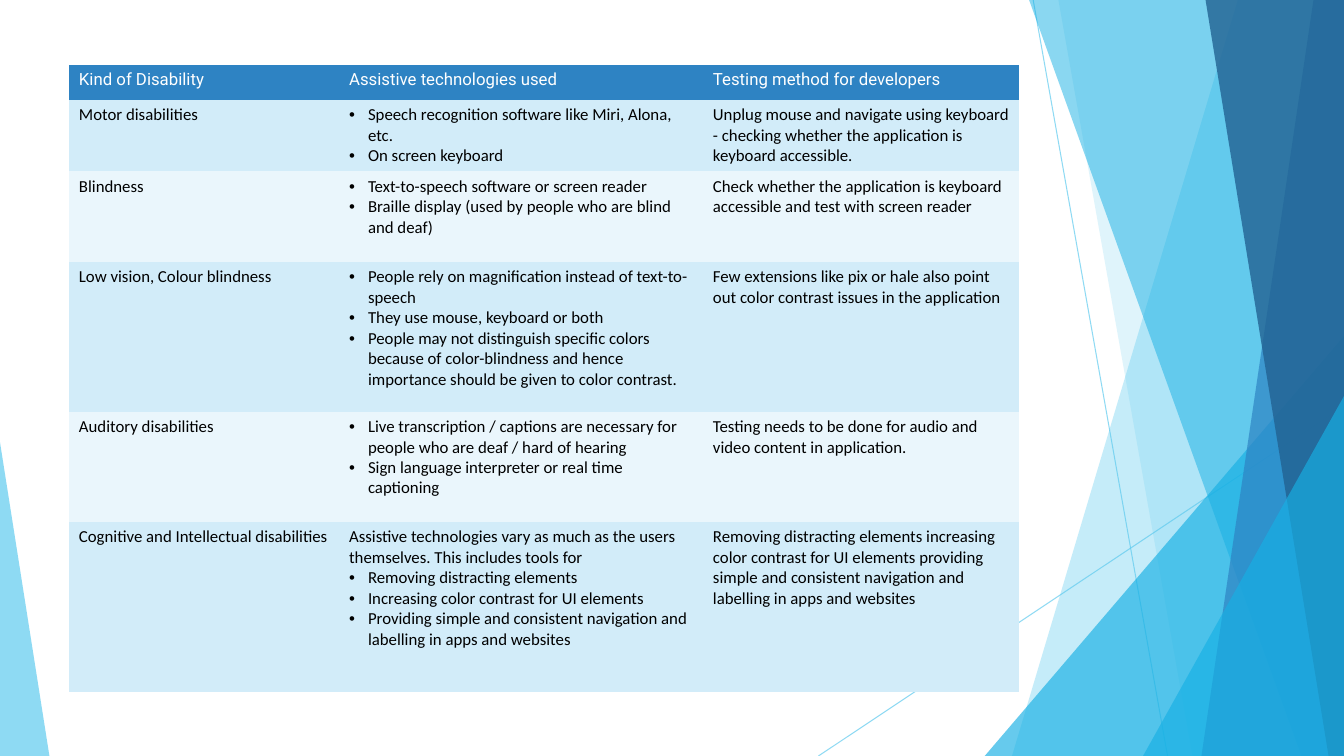
from pptx import Presentation
from pptx.dml.color import RGBColor
from pptx.enum.shapes import MSO_CONNECTOR, MSO_SHAPE
from pptx.oxml.ns import qn
from pptx.oxml.xmlchemy import OxmlElement
from pptx.util import Pt

STRAIGHT = MSO_CONNECTOR.STRAIGHT
TRIANGLE = MSO_SHAPE.ISOSCELES_TRIANGLE

WHITE = RGBColor(0xFF, 0xFF, 0xFF)
BLACK = RGBColor(0x00, 0x00, 0x00)
SKY = RGBColor(0x5F, 0xCB, 0xEF)
CYAN = RGBColor(0x17, 0xB0, 0xE4)
BLUE = RGBColor(0x2E, 0x83, 0xC3)
NAVY = RGBColor(0x22, 0x62, 0x92)
BAND_DARK = RGBColor(0xD2, 0xEC, 0xF9)
BAND_LIGHT = RGBColor(0xEA, 0xF6, 0xFC)

WIDTH, HEIGHT = 960, 540
PLAIN_TABLE = "{2D5ABB26-0587-4C30-8999-92F81FD0307C}"
COLUMN_WIDTHS = (193, 259.9, 226.1)
ROW_HEIGHTS = (24.5, 50.8, 64.8, 107, 78.8, 121.7)

HEADINGS = ("Kind of Disability", "Assistive technologies used", "Testing method for developers")
DISABILITIES = (
    ("Motor disabilities", "",
     ("Speech recognition software like Miri, Alona, etc.", "On screen keyboard"),
     "Unplug mouse and navigate using keyboard - checking whether the application is "
     "keyboard accessible."),
    ("Blindness", "",
     ("Text-to-speech software or screen reader",
      "Braille display (used by people who are blind and deaf)"),
     "Check whether the application is keyboard accessible and test with screen reader"),
    ("Low vision, Colour blindness", "",
     ("People rely on magnification instead of text-to-speech",
      "They use mouse, keyboard or both",
      "People may not distinguish specific colors because of color-blindness and hence "
      "importance should be given to color contrast."),
     "Few extensions like pix or hale also point out color contrast issues in the application"),
    ("Auditory disabilities", "",
     ("Live transcription / captions are necessary for people who are deaf / hard of hearing",
      "Sign language interpreter or real time captioning"),
     "Testing needs to be done for audio and video content in application."),
    ("Cognitive and Intellectual disabilities",
     "Assistive technologies vary as much as the users themselves. This includes tools for",
     ("Removing distracting elements", "Increasing color contrast for UI elements",
      "Providing simple and consistent navigation and labelling in apps and websites"),
     "Removing distracting elements increasing color contrast for UI elements providing "
     "simple and consistent navigation and labelling in apps and websites"),
)


def write(paragraph, text, font="Calibri", size=12, color=BLACK, bullet=False):
    run = paragraph.add_run()
    run.text = text
    run.font.name = font
    run.font.size = Pt(size)
    run.font.color.rgb = color
    if bullet:
        properties = paragraph._p.get_or_add_pPr()
        properties.set("marL", str(Pt(13.5)))
        properties.set("indent", str(-Pt(13.5)))
        typeface = OxmlElement("a:buFont")
        typeface.set("typeface", "Arial")
        mark = OxmlElement("a:buChar")
        mark.set("char", "•")
        properties.extend((typeface, mark))


class SlideBuilder:
    def __init__(self, slide):
        self.slide = slide

    def paint(self, fill, color, opacity):
        fill.solid()
        fill.fore_color.rgb = color
        alpha = OxmlElement("a:alpha")
        alpha.set("val", str(opacity * 1000))
        fill._xPr.find(qn("a:solidFill")).find(qn("a:srgbClr")).append(alpha)

    def finish(self, shape, color, opacity):
        self.paint(shape.fill, color, opacity)
        shape.line.fill.background()
        shape.shadow.inherit = False

    def line(self, start, end):
        connector = self.slide.shapes.add_connector(STRAIGHT, *map(Pt, start + end))
        connector.line.width = Pt(0.75)
        self.paint(connector.line.fill, SKY, 70)
        connector._element.spPr.append(OxmlElement("a:effectLst"))

    def right_band(self, top_x, bottom_x, color, opacity):
        builder = self.slide.shapes.build_freeform(Pt(top_x), 0)
        corners = ((WIDTH, 0), (WIDTH, HEIGHT), (bottom_x, HEIGHT))
        builder.add_line_segments([(Pt(x), Pt(y)) for x, y in corners], close=True)
        self.finish(builder.convert_to_shape(), color, opacity)

    def corner_triangle(self, left, top, width, apex, color, opacity):
        shape = self.slide.shapes.add_shape(
            TRIANGLE, Pt(left), Pt(top), Pt(width), Pt(HEIGHT - top))
        shape.adjustments[0] = apex
        self.finish(shape, color, opacity)

    def table(self, left, top):
        frame = self.slide.shapes.add_table(
            len(ROW_HEIGHTS), len(COLUMN_WIDTHS), Pt(left), Pt(top),
            Pt(sum(COLUMN_WIDTHS)), Pt(sum(ROW_HEIGHTS)))
        table = frame.table
        table._tbl.tblPr.find(qn("a:tableStyleId")).text = PLAIN_TABLE
        for column, width in zip(table.columns, COLUMN_WIDTHS):
            column.width = Pt(width)
        for row, height in zip(table.rows, ROW_HEIGHTS):
            row.height = Pt(height)
        for index, heading in enumerate(HEADINGS):
            self.cell(table.cell(0, index), BLUE, heading, font="Roboto", color=WHITE)
        for index, (kind, intro, tools, method) in enumerate(DISABILITIES, 1):
            band = BAND_DARK if index % 2 else BAND_LIGHT
            self.cell(table.cell(index, 0), band, kind)
            self.cell(table.cell(index, 1), band, intro, tools)
            self.cell(table.cell(index, 2), band, method)

    def cell(self, cell, fill, text, bullets=(), **style):
        cell.fill.solid()
        cell.fill.fore_color.rgb = fill
        items = [(text, False)] if text else []
        items += [(bullet, True) for bullet in bullets]
        frame = cell.text_frame
        for index, (item, bullet) in enumerate(items):
            paragraph = frame.add_paragraph() if index else frame.paragraphs[0]
            write(paragraph, item, bullet=bullet, **style)


def main():
    presentation = Presentation()
    presentation.slide_width, presentation.slide_height = Pt(WIDTH), Pt(HEIGHT)
    builder = SlideBuilder(presentation.slides.add_slide(presentation.slide_layouts[6]))
    builder.line((738, 0), (834, HEIGHT))
    builder.line((WIDTH, 290), (584.6, HEIGHT))
    builder.right_band(884.2, 722.9, SKY, 36)
    builder.right_band(756, 851.8, SKY, 20)
    builder.corner_triangle(703.4, 240, 256.6, 1, CYAN, 66)
    builder.right_band(735.1, 929.5, CYAN, 50)
    builder.right_band(938.2, 858.2, BLUE, 70)
    builder.right_band(861.1, 949, NAVY, 80)
    builder.corner_triangle(816.5, 283, 143.5, 1, CYAN, 66)
    builder.corner_triangle(0, 316, 35.3, 0, SKY, 70)
    builder.table(49.2, 46.6)
    presentation.save("out.pptx")


if __name__ == "__main__":
    main()
